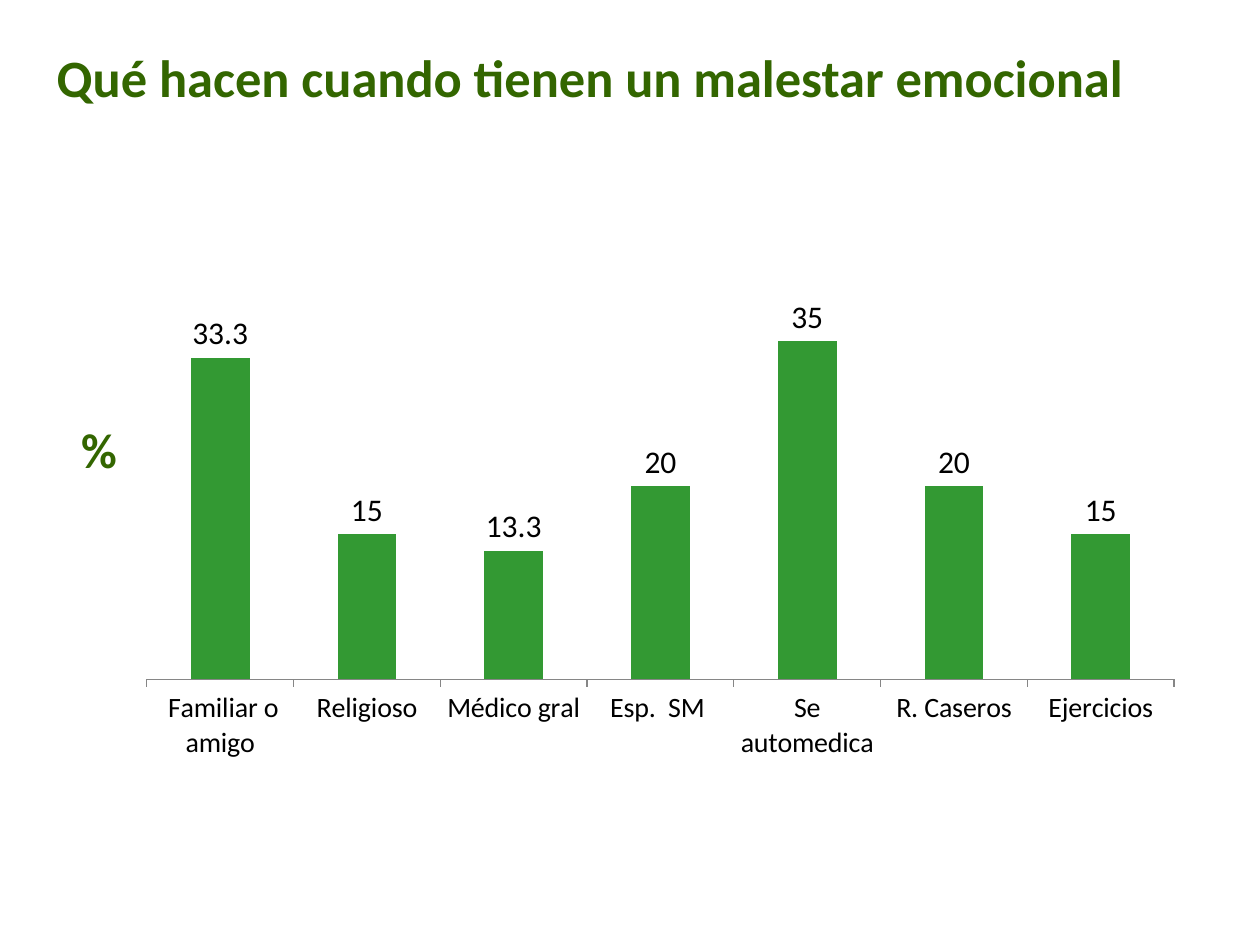
from lxml import etree
from pptx import Presentation
from pptx import util as u
from pptx.chart import data
from pptx.dml.color import RGBColor
from pptx.enum import chart as ch, text
from pptx.oxml import ns

HUES = {"dark": "336600", "bar": "339933", "ink": "000000", "axis": "868686"}
HABITS = {
    " Familiar o amigo": 33.3,
    "Religioso": 15,
    "Médico gral": 13.3,
    "Esp.  SM ": 20,
    "Se automedica": 35,
    "R. Caseros": 20,
    "Ejercicios": 15,
}


def hue(name):
    return RGBColor.from_string(HUES[name])


class Deck:
    face = "Calibri"

    def __init__(self):
        self.prs = Presentation()
        self.prs.slide_width, self.prs.slide_height = u.Inches(10), u.Inches(7.5)
        self.slide = self.prs.slides.add_slide(self.prs.slide_layouts[5])

    def style(self, font, size, color, bold=False):
        font.name, font.size, font.bold = self.face, u.Pt(size), bold
        font.color.rgb = hue(color)

    def letter(self, shape, words, size, align):
        """Fill a shape with one bold line of text."""
        frame = shape.text_frame
        frame.text = words
        frame.word_wrap = True
        frame.auto_size = text.MSO_AUTO_SIZE.SHAPE_TO_FIT_TEXT
        frame.vertical_anchor = text.MSO_ANCHOR.TOP
        para = frame.paragraphs[0]
        para.alignment = align
        self.style(para.font, size, "dark", True)

    def title(self, words, box):
        shape = self.slide.shapes.title
        shape.left, shape.top, shape.width, shape.height = map(u.Inches, box)
        self.letter(shape, words, 30, text.PP_ALIGN.LEFT)

    def label(self, words, box):
        shape = self.slide.shapes.add_textbox(*map(u.Inches, box))
        self.letter(shape, words, 28, text.PP_ALIGN.CENTER)

    def bars(self, rows, box, plot):
        feed = data.CategoryChartData()
        feed.categories = list(rows)
        feed.add_series("Series 1", list(rows.values()))
        chart = self.slide.shapes.add_chart(
            ch.XL_CHART_TYPE.COLUMN_CLUSTERED, *map(u.Inches, box), feed).chart
        chart.has_title = chart.has_legend = False
        self.style(chart.font, 18, "ink")

        group = chart.plots[0]
        group.gap_width, group.vary_by_categories = 150, False
        fill = group.series[0].format.fill
        fill.solid()
        fill.fore_color.rgb = hue("bar")
        group.has_data_labels = True
        tags = group.data_labels
        tags.show_value = True
        tags.position = ch.XL_LABEL_POSITION.OUTSIDE_END
        self.style(tags.font, 18, "ink")

        base = chart.category_axis
        base.major_tick_mark = ch.XL_TICK_MARK.OUTSIDE
        base.format.line.color.rgb = hue("axis")
        base.format.line.width = u.Pt(0.75)
        self.style(base.tick_labels.font, 16, "ink")
        scale = chart.value_axis
        scale.minimum_scale, scale.maximum_scale = 0, 40
        scale.has_major_gridlines = scale.visible = False
        self.place(chart, plot)

    def place(self, chart, plot):
        """Fix the inner plot area, in fractions of the chart."""
        area = chart._chartSpace.find(".//" + ns.qn("c:plotArea"))
        for old in area.findall(ns.qn("c:layout")):
            area.remove(old)
        spot = etree.Element(ns.qn("c:layout"))
        area.insert(0, spot)
        hand = etree.SubElement(spot, ns.qn("c:manualLayout"))
        parts = [("layoutTarget", "inner"), ("xMode", "edge"), ("yMode", "edge")]
        for tag, val in parts + list(zip("xywh", plot)):
            etree.SubElement(hand, ns.qn("c:" + tag)).set("val", str(val))


def main():
    deck = Deck()
    deck.title("Qué hacen cuando tienen un malestar emocional",
               (0.35, 0.31, 9.06, 0.61))
    deck.bars(HABITS, (0.35, 1.7, 9.06, 5.2), (0.09, 0.12, 0.9, 0.59))
    deck.label("%", (0.35, 3.28, 0.87, 0.57))
    deck.prs.save("out.pptx")


if __name__ == "__main__":
    main()
